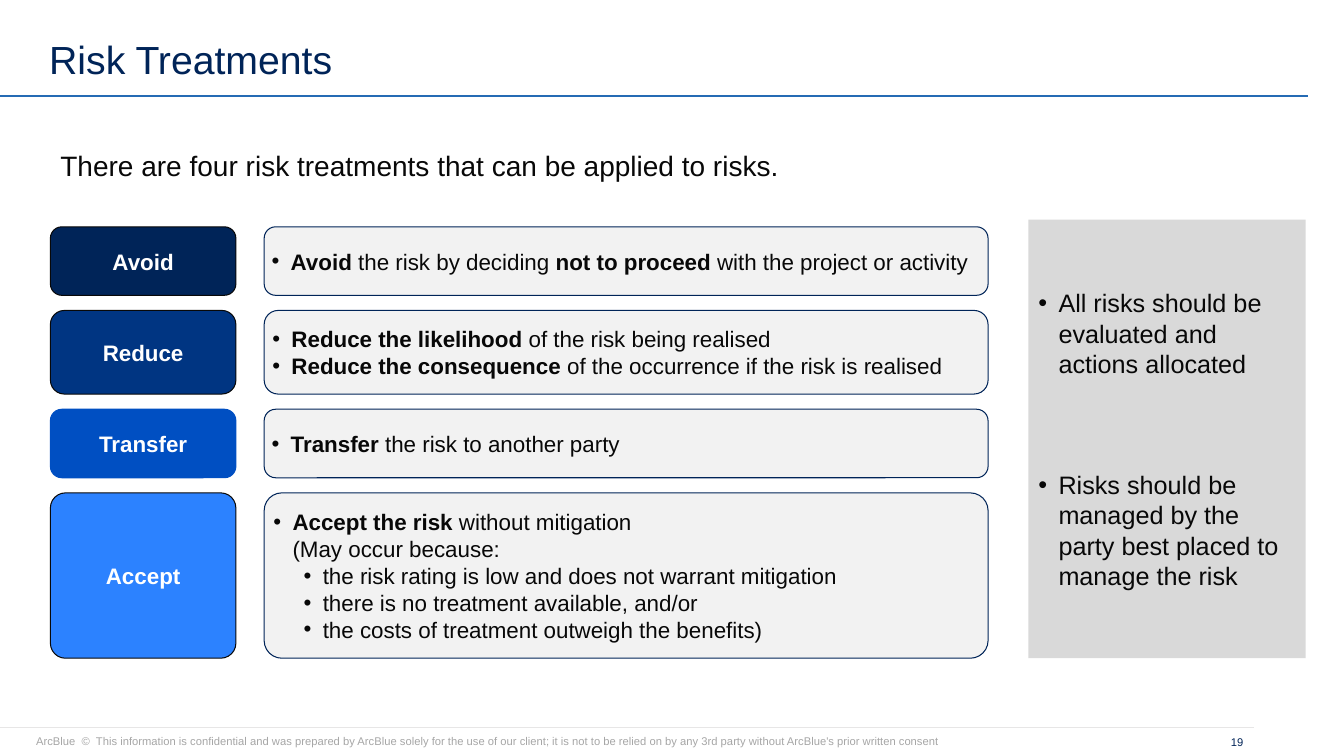
from lxml import etree
from pptx import Presentation
from pptx.dml.color import RGBColor
from pptx.enum.shapes import MSO_CONNECTOR, MSO_SHAPE
from pptx.enum.text import MSO_ANCHOR, PP_ALIGN
from pptx.oxml.ns import qn
from pptx.util import Emu, Pt

RECT, ROUND = MSO_SHAPE.RECTANGLE, MSO_SHAPE.ROUNDED_RECTANGLE
LINE = MSO_CONNECTOR.STRAIGHT
TOP, MIDDLE, BOTTOM = MSO_ANCHOR.TOP, MSO_ANCHOR.MIDDLE, MSO_ANCHOR.BOTTOM
LEFT, CENTER, RIGHT = PP_ALIGN.LEFT, PP_ALIGN.CENTER, PP_ALIGN.RIGHT
FONT = "Arial"
NAVY, BLACK, WHITE, PALE = "002458", "080808", "FFFFFF", "F2F2F2"
GAP = 15

# label, fill, edge, height, label corner, text corner, paragraphs of (level, runs of (text, bold))
ROWS = [
    ("Avoid", NAVY, BLACK, 68, 0.167, 0.167, [
        (0, [("Avoid ", True), ("the risk by deciding ", False),
             ("not to proceed ", True), ("with the project or activity", False)])]),
    ("Reduce", "003582", BLACK, 83, 0.167, 0.167, [
        (0, [("Reduce the likelihood ", True), ("of the risk being realised", False)]),
        (0, [("Reduce the consequence ", True),
             ("of the occurrence if the risk is realised", False)])]),
    ("Transfer", "004FC2", "004FC2", 68, 0.167, 0.167, [
        (0, [("Transfer ", True), ("the risk to another party", False)])]),
    ("Accept", "2C82FF", BLACK, 164, 0.091, 0.107, [
        (0, [("Accept the risk ", True), ("without mitigation\n(May occur because:", False)]),
        (1, [("the risk rating is low and does not warrant mitigation", False)]),
        (1, [("there is no treatment available, and/or", False)]),
        (1, [("the costs of treatment outweigh the benefits)", False)])]),
]
ADVICE = ["All risks should be evaluated and actions allocated",
          "Risks should be managed by the party best placed to manage the risk"]
NOTICE = ("ArcBlue  ©  This information is confidential and was prepared by ArcBlue solely "
          "for the use of our client; it is not to be relied on by any 3rd party without "
          "ArcBlue's prior written consent")


def px(n):
    """Turn px, 100 to the inch, into EMU."""
    return Emu(n * 9144)


def color(code):
    return RGBColor.from_string(code)


def add_run(para, text, size, tint, bold=False):
    """Add text as runs, with a line break at each newline."""
    for i, part in enumerate(text.split("\n")):
        if i:
            para.add_line_break()
        run = para.add_run()
        run.text = part
        font = run.font
        font.name, font.size, font.bold = FONT, Pt(size), bold
        font.color.rgb = color(tint)


def add_bullet(para, left, hang):
    props = para._p.get_or_add_pPr()
    props.set("marL", str(px(left)))
    props.set("indent", str(-px(hang)))
    etree.SubElement(props, qn("a:buFont")).set("typeface", FONT)
    etree.SubElement(props, qn("a:buChar")).set("char", "•")


def next_para(frame, first):
    para = frame.paragraphs[0] if first else frame.add_paragraph()
    para.alignment = LEFT
    return para


def add_text(slide, box, text, size, tint, anchor=TOP, align=LEFT, space=None):
    frame = slide.shapes.add_textbox(*map(px, box)).text_frame
    frame.word_wrap = True
    frame.vertical_anchor = anchor
    para = frame.paragraphs[0]
    para.alignment = align
    if space:
        para.line_spacing = space
    add_run(para, text, size, tint)


def add_rule(slide, y, end, tint, width):
    rule = slide.shapes.add_connector(LINE, px(0), px(y), px(end), px(y))
    rule.line.color.rgb = color(tint)
    rule.line.width = Pt(width)
    etree.SubElement(rule._element.spPr, qn("a:effectLst"))


def add_box(slide, kind, box, fill, edge=None):
    shape = slide.shapes.add_shape(kind, *map(px, box))
    shape.shadow.inherit = False
    shape.fill.solid()
    shape.fill.fore_color.rgb = color(fill)
    if edge:
        shape.line.color.rgb = color(edge)
        shape.line.width = Pt(0.75)
    else:
        shape.line.fill.background()
    shape.text_frame.word_wrap = True
    shape.text_frame.vertical_anchor = MIDDLE
    return shape


def add_card(slide, box, fill, edge, corner):
    """Add a rounded box with narrow margins and return its text frame."""
    card = add_box(slide, ROUND, box, fill, edge)
    card.adjustments[0] = corner
    frame = card.text_frame
    frame.margin_left = frame.margin_right = px(4)
    frame.margin_top = frame.margin_bottom = px(4)
    return frame


def add_rows(slide):
    top = 225
    for label, fill, edge, high, bend, curve, paras in ROWS:
        frame = add_card(slide, (50, top, 184, high), fill, edge, bend)
        para = frame.paragraphs[0]
        para.alignment = CENTER
        add_run(para, label, 16, WHITE, True)

        frame = add_card(slide, (262, top, 718, high), PALE, NAVY, curve)
        for i, (level, runs) in enumerate(paras):
            para = next_para(frame, i == 0)
            para.level = level
            add_bullet(para, 19 + 30 * level, 19)
            for text, bold in runs:
                add_run(para, text, 16, BLACK, bold)
        top += high + GAP


def add_advice(slide):
    frame = add_box(slide, RECT, (1020, 218, 275, 435), "D9D9D9").text_frame
    for i, text in enumerate(ADVICE):
        para = next_para(frame, i == 0)
        if i:
            para.space_before = Pt(65)
        add_bullet(para, 20, 20)
        add_run(para, text, 18, BLACK)


def main():
    deck = Presentation()
    deck.slide_width, deck.slide_height = px(1333), px(750)
    slide = deck.slides.add_slide(deck.slide_layouts[6])
    add_rule(slide, 722, 1244, "E7E6E6", 0.75)
    add_text(slide, (26, 724, 936, 24), NOTICE, 8, "A6A6A6")
    add_text(slide, (1192, 724, 51, 24), "19", 8, NAVY, MIDDLE, RIGHT)
    add_rule(slide, 95, 1297, "256BB4", 1.5)
    add_text(slide, (39, 0, 1256, 87), "Risk Treatments", 28, NAVY, BOTTOM, LEFT, 0.9)
    add_text(slide, (50, 142, 1078, 44), "There are four risk treatments that can be applied to risks.",
             20, BLACK)
    add_advice(slide)
    add_rows(slide)
    deck.save("out.pptx")


if __name__ == "__main__":
    main()
